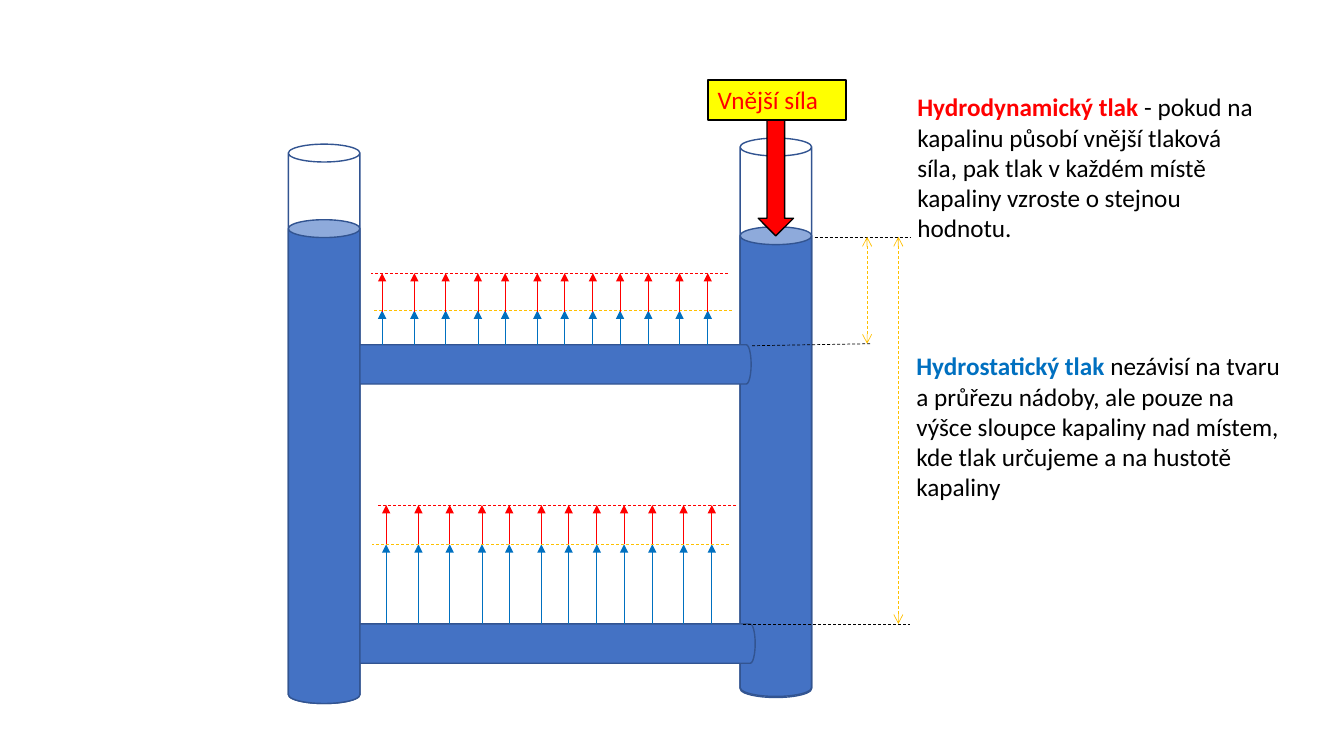
from dataclasses import dataclass

from pptx import Presentation
from pptx import util as u
from pptx.dml.color import RGBColor
from pptx.enum import dml, shapes, text
from pptx.oxml.ns import qn
from lxml import etree


@dataclass(frozen=True)
class Theme:
    font: str = "Calibri"
    size: float = 18
    water: str = "4472C4"
    glass: str = "325491"
    static: str = "0070C0"
    dynamic: str = "FF0000"
    level: str = "FFC000"
    label: str = "FFFF00"
    ink: str = "000000"
    thin: float = 0.5
    outline: float = 1
    frame: float = 1.5


THEME = Theme()
LEFT_TUBE, RIGHT_TUBE, TUBE_WIDTH = 2.86, 7.34, 0.71
PIPE_LENGTH, PIPE_WIDTH = 4.09, 0.39
UPPER_PIPE, LOWER_PIPE = 3.42, 6.19
SURFACE = 2.35
ARROW_OFFSETS = (0, 0.32, 0.63, 0.95, 1.22, 1.54, 1.81, 2.09, 2.36, 2.64, 2.95, 3.23)


def set_values(target, values):
    for name, value in values.items():
        setattr(target, name, value)


def rgb(colour):
    return RGBColor.from_string(colour)


def paint(shape, fill, line, width):
    if fill:
        shape.fill.solid()
        shape.fill.fore_color.rgb = rgb(fill)
    else:
        shape.fill.background()
    shape.line.color.rgb = rgb(line)
    shape.line.width = u.Pt(width)


def add_solid(slide, kind, box, fill, line=THEME.glass):
    shape = slide.shapes.add_shape(kind, *map(u.Inches, box))
    shape.shadow.inherit = False
    paint(shape, fill, line, THEME.outline)
    return shape


def add_tube(slide, left, top, height, fill=None):
    add_solid(slide, shapes.MSO_SHAPE.CAN, (left, top, TUBE_WIDTH, height), fill)


def add_pipe(slide, left, top):
    """Add a horizontal pipe: an upright can turned about its centre."""
    turn = (PIPE_LENGTH - PIPE_WIDTH) / 2
    box = (left + turn, top - turn, PIPE_WIDTH, PIPE_LENGTH)
    add_solid(slide, shapes.MSO_SHAPE.CAN, box, THEME.water).rotation = 270


def add_line(slide, start, end, colour, dashed=False, head=None, tail=None):
    points = map(u.Inches, (*start, *end))
    connector = slide.shapes.add_connector(shapes.MSO_CONNECTOR.STRAIGHT, *points)
    connector.line.color.rgb = rgb(colour)
    connector.line.width = u.Pt(THEME.thin)
    if dashed:
        connector.line.dash_style = dml.MSO_LINE.DASH
    outline = connector.line._get_or_add_ln()
    for tag, arrow in (("a:headEnd", head), ("a:tailEnd", tail)):
        if arrow:
            etree.SubElement(outline, qn(tag)).set("type", arrow)
    etree.SubElement(connector._element.spPr, qn("a:effectLst"))


def add_pressure_arrows(slide, left, bottom, top, colour):
    for offset in ARROW_OFFSETS:
        x = left + offset
        add_line(slide, (x, bottom), (x, top), colour, tail="triangle")


def add_text(slide, box, runs):
    """Add a text box from (words, colour, bold) runs."""
    shape = slide.shapes.add_textbox(*map(u.Inches, box))
    set_values(shape.text_frame, {"word_wrap": True,
                                  "auto_size": text.MSO_AUTO_SIZE.SHAPE_TO_FIT_TEXT})
    paragraph = shape.text_frame.paragraphs[0]
    for words, colour, bold in runs:
        run = paragraph.add_run()
        run.text = words
        set_values(run.font, {"name": THEME.font, "size": u.Pt(THEME.size), "bold": bold})
        run.font.color.rgb = rgb(colour)
    return shape


def add_vessel(slide):
    add_tube(slide, RIGHT_TUBE, 2.25, 4.66, THEME.water)
    add_tube(slide, RIGHT_TUBE, 1.37, 5.55)
    add_tube(slide, LEFT_TUBE, 1.43, 5.55)
    add_pipe(slide, 3.4, LOWER_PIPE)
    add_pipe(slide, 3.36, UPPER_PIPE)
    add_tube(slide, LEFT_TUBE, 2.18, 4.8, THEME.water)


def add_hydrostatic(slide):
    add_pressure_arrows(slide, 3.83, LOWER_PIPE, 5.4, THEME.static)
    add_pressure_arrows(slide, 3.79, UPPER_PIPE, 3.08, THEME.static)
    for left, right, y in ((3.71, 7.26, 3.08), (3.69, 7.23, 5.4)):
        add_line(slide, (right, y), (left, y), THEME.level, dashed=True)
    for start, end in (((7.46, 3.43), (8.64, 3.41)),
                       ((7.37, LOWER_PIPE), (9.03, LOWER_PIPE)),
                       ((8.08, SURFACE), (9.03, SURFACE))):
        add_line(slide, start, end, THEME.ink, dashed=True)
    for x, depth in ((8.6, 3.41), (8.91, LOWER_PIPE)):
        add_line(slide, (x, SURFACE), (x, depth), THEME.level, True, "arrow", "arrow")
    add_text(slide, (8.99, 3.43, 3.87, 1.62), (
        ("Hydrostatický tlak ", THEME.static, True),
        ("nezávisí na tvaru a průřezu nádoby, ale pouze na výšce sloupce kapaliny "
         "nad místem, kde tlak určujeme a na hustotě kapaliny", THEME.ink, False)))


def add_hydrodynamic(slide):
    add_solid(slide, shapes.MSO_SHAPE.DOWN_ARROW, (7.52, 1.19, 0.35, 1.15),
              THEME.dynamic, THEME.ink)
    for first, bottom, top, left, right in ((3.83, 5.4, 5.01, 3.75, 7.3),
                                            (3.79, 3.1, 2.71, 3.68, 7.22)):
        add_pressure_arrows(slide, first, bottom, top, THEME.dynamic)
        add_line(slide, (right, top), (left, top), THEME.dynamic, dashed=True)
    add_text(slide, (9, 0.86, 3.65, 1.62), (
        ("Hydrodynamický tlak ", THEME.dynamic, True),
        ("- pokud na kapalinu působí vnější tlaková síla, pak tlak v každém místě "
         "kapaliny vzroste o stejnou hodnotu.", THEME.ink, False)))
    force = add_text(slide, (7.02, 0.79, 1.37, 0.4),
                     (("Vnější síla", THEME.dynamic, False),))
    paint(force, THEME.label, THEME.ink, THEME.frame)


def main():
    presentation = Presentation()
    set_values(presentation, {"slide_width": u.Inches(13.33),
                              "slide_height": u.Inches(7.5)})
    slide = presentation.slides.add_slide(presentation.slide_layouts[6])
    add_vessel(slide)
    add_hydrostatic(slide)
    add_hydrodynamic(slide)
    presentation.save("out.pptx")


if __name__ == "__main__":
    main()
